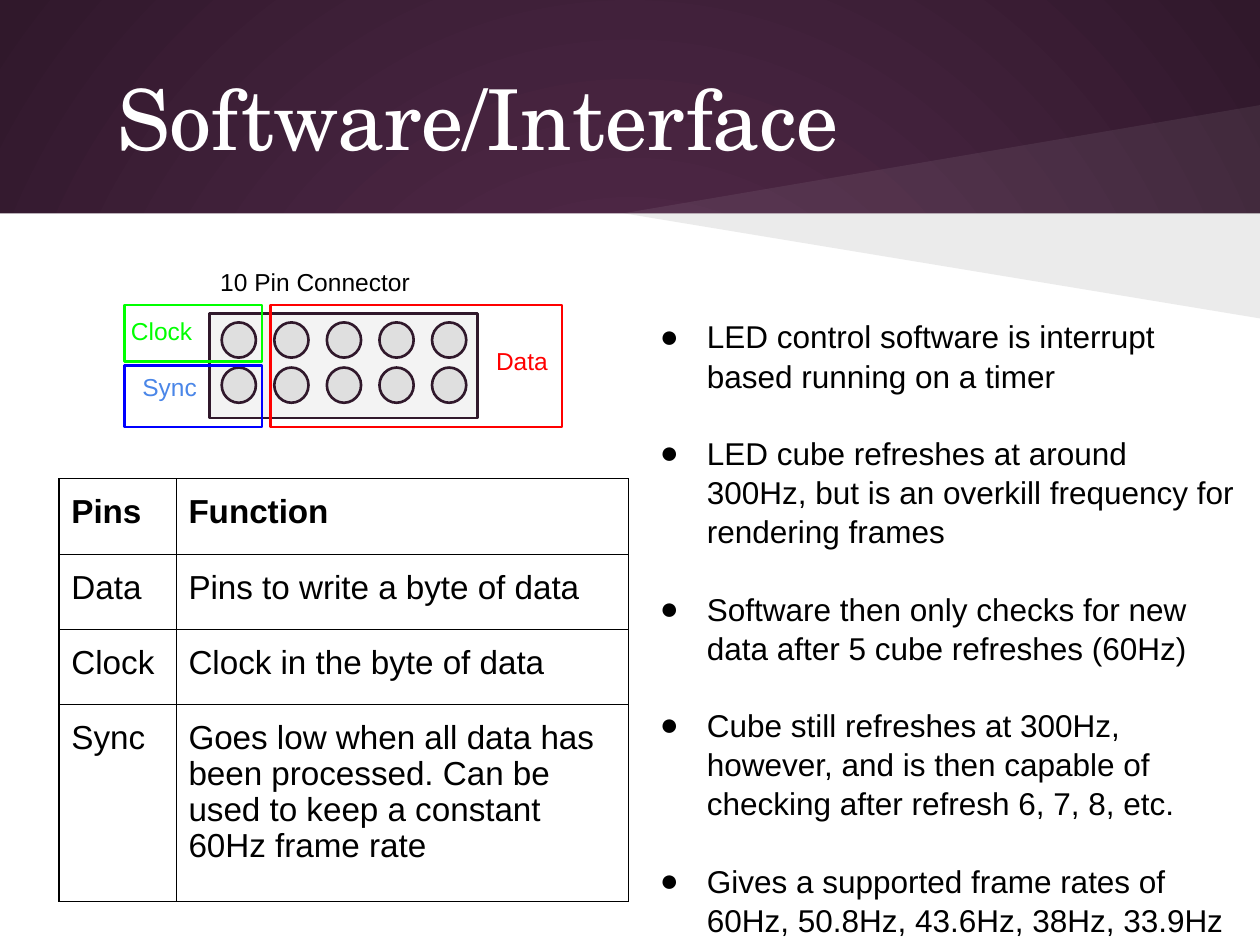
from dataclasses import dataclass

from lxml import etree
from pptx import Presentation
from pptx.dml.color import RGBColor
from pptx.enum.shapes import MSO_SHAPE
from pptx.enum.text import MSO_ANCHOR, MSO_AUTO_SIZE, PP_ALIGN
from pptx.oxml.ns import qn
from pptx.util import Cm, Pt

RECT, OVAL = MSO_SHAPE.RECTANGLE, MSO_SHAPE.OVAL
TOP, MIDDLE = MSO_ANCHOR.TOP, MSO_ANCHOR.MIDDLE
LEFT, FIXED = PP_ALIGN.LEFT, MSO_AUTO_SIZE.NONE


@dataclass(frozen=True)
class Theme:
    sans: str = "Arial"
    serif: str = "TeX Gyre Schola"
    title: int = 48
    cell: int = 19
    body: int = 18
    label: int = 14
    glow: str = "592D50"
    plum: str = "30182B"
    white: str = "FFFFFF"
    black: str = "000000"
    shell: str = "F3F3F3"
    pin: str = "DFDFDF"
    red: str = "FF0000"
    green: str = "00FF00"
    blue: str = "0000FF"
    sky: str = "4A86E8"


@dataclass(frozen=True)
class Box:
    """A place on the slide, in centimetres."""
    x: float
    y: float
    w: float
    h: float

    def place(self) -> tuple:
        return Cm(self.x), Cm(self.y), Cm(self.w), Cm(self.h)


@dataclass(frozen=True)
class Group:
    """A coloured frame around some pins, with its label."""
    name: str
    frame: Box
    line: str
    label: Box
    ink: str


THEME = Theme()
EDGE = 4.3
GROUPS = [
    Group("Data", Box(5.46, 6.15, 5.87, 2.46), THEME.red,
          Box(9.75, 6.73, 1.57, 1.37), THEME.red),
    Group("Clock", Box(2.51, 6.15, 2.77, 1.14), THEME.green,
          Box(2.39, 6.12, 2.08, 1.37), THEME.green),
    Group("Sync", Box(2.51, 7.37, 2.77, 1.24), THEME.blue,
          Box(2.62, 7.24, 2.08, 1.37), THEME.sky),
]
POINTS = [
    "LED control software is interrupt based running on a timer",
    "LED cube refreshes at around 300Hz, but is an overkill frequency for "
    "rendering frames",
    "Software then only checks for new data after 5 cube refreshes (60Hz)",
    "Cube still refreshes at 300Hz, however, and is then capable of "
    "checking after refresh 6, 7, 8, etc.",
    "Gives a supported frame rates of 60Hz, 50.8Hz, 43.6Hz, 38Hz, 33.9Hz",
]
ROWS = [
    ("Pins", "Function"),
    ("Data", "Pins to write a byte of data"),
    ("Clock", "Clock in the byte of data"),
    ("Sync", "Goes low when all data has been processed. Can be used to keep "
             "a constant 60Hz frame rate"),
]


def rgb(code: str) -> RGBColor:
    return RGBColor.from_string(code)


def write(frame, *lines: str, size: int, ink: str = THEME.black,
          font: str = THEME.sans, bold: bool = False, pitch: float = 1.0,
          gap: float = 0, left: float = 0, first: float = 0,
          bullet: str = "") -> None:
    """Fill a text frame, one paragraph a line; indents are in centimetres."""
    frame.word_wrap = True
    for i, line in enumerate(lines):
        para = frame.add_paragraph() if i else frame.paragraphs[0]
        para.alignment, para.line_spacing = LEFT, pitch
        para.space_before, para.space_after = Pt(gap if i else 0), Pt(0)
        props = para._p.get_or_add_pPr()
        props.set("marL", str(Cm(left)))
        props.set("indent", str(Cm(first)))
        if bullet:
            tint = etree.SubElement(props, qn("a:buClr"))
            etree.SubElement(tint, qn("a:srgbClr"), val=ink)
            etree.SubElement(props, qn("a:buChar"), char=bullet)
        else:
            etree.SubElement(props, qn("a:buNone"))
        run = para.add_run()
        run.text = line
        run.font.name, run.font.size = font, Pt(size)
        run.font.bold, run.font.color.rgb = bold, rgb(ink)


def pad(frame, anchor=TOP) -> None:
    frame.auto_size, frame.vertical_anchor = FIXED, anchor
    frame.margin_left = frame.margin_right = Cm(0.25)
    frame.margin_top = frame.margin_bottom = Cm(0.25)


def paint(shape, fill: str = "", line: str = "") -> None:
    shape.shadow.inherit = False
    if fill:
        shape.fill.solid()
        shape.fill.fore_color.rgb = rgb(fill)
    else:
        shape.fill.background()
    if line:
        shape.line.color.rgb, shape.line.width = rgb(line), Pt(1.5)
    else:
        shape.line.fill.background()


def draw(slide, kind, box: Box, fill: str = "", line: str = "") -> None:
    paint(slide.shapes.add_shape(kind, *box.place()), fill, line)


def label(slide, text: str, box: Box, ink: str = THEME.black) -> None:
    frame = slide.shapes.add_textbox(*box.place()).text_frame
    pad(frame)
    write(frame, text, size=THEME.label, ink=ink)


def wedge(slide, tip: float, fill: str, alpha: int) -> None:
    """Add a sheer triangle from the band's edge to a height on the right."""
    path = slide.shapes.build_freeform(Cm(25.4), Cm(EDGE))
    path.add_line_segments([(Cm(12.57), Cm(EDGE)), (Cm(25.4), Cm(tip))])
    shape = path.convert_to_shape()
    paint(shape, fill)
    tint = shape._element.spPr.find(".//" + qn("a:srgbClr"))
    etree.SubElement(tint, qn("a:alpha"), val=str(alpha * 1000))


def backdrop(slide) -> None:
    fill = slide.background.fill
    fill.gradient()
    for stop, code in zip(fill.gradient_stops, (THEME.glow, THEME.plum)):
        stop.color.rgb = rgb(code)
    lin = slide._element.find(".//" + qn("a:lin"))
    path = etree.Element(qn("a:path"), path="circle")
    etree.SubElement(path, qn("a:fillToRect"),
                     {side: "50000" for side in "ltrb"})
    lin.getparent().replace(lin, path)
    draw(slide, RECT, Box(0, EDGE, 25.4, 19.05 - EDGE), THEME.white)
    wedge(slide, 6.42, THEME.black, 8)
    wedge(slide, 2.12, THEME.white, 7)


def plug(slide) -> None:
    draw(slide, RECT, Box(4.22, 6.32, 5.41, 2.11), THEME.shell, THEME.plum)
    label(slide, "10 Pin Connector", Box(4.19, 5.13, 5.41, 1.37))
    for row in range(2):
        for col in range(5):
            spot = Box(4.47 + 1.06 * col, 6.5 + 0.91 * row, 0.69, 0.71)
            draw(slide, OVAL, spot, THEME.pin, THEME.plum)
    for group in GROUPS:
        draw(slide, RECT, group.frame, line=group.line)
        label(slide, group.name, group.label, group.ink)


def edge(cell) -> None:
    for side in ("lnL", "lnR", "lnT", "lnB"):
        line = etree.SubElement(cell._tc.get_or_add_tcPr(), qn("a:" + side),
                                w=str(Pt(0.75)))
        fill = etree.SubElement(line, qn("a:solidFill"))
        etree.SubElement(fill, qn("a:srgbClr"), val=THEME.black)


def grid(slide) -> None:
    box = Box(1.19, 9.65, 11.48, 8.52)
    table = slide.shapes.add_table(len(ROWS), 2, *box.place()).table
    table.horz_banding = False
    for col, width in zip(table.columns, (2.36, 9.12)):
        col.width = Cm(width)
    for row, height in zip(table.rows, (1.52, 1.52, 1.52, 3.96)):
        row.height = Cm(height)
    for i, texts in enumerate(ROWS):
        for j, text in enumerate(texts):
            cell = table.cell(i, j)
            cell.margin_left = cell.margin_right = Cm(0.25)
            cell.margin_top = cell.margin_bottom = Cm(0.33)
            edge(cell)
            cell.fill.background()
            write(cell.text_frame, text, size=THEME.cell, bold=i == 0,
                  pitch=0.97)


def lift(slide, shape, box: Box, anchor=TOP):
    """Move a placeholder to its place, in front of what is drawn so far."""
    shape.left, shape.top, shape.width, shape.height = box.place()
    slide.shapes._spTree.append(shape._element)
    pad(shape.text_frame, anchor)
    return shape.text_frame


def main() -> None:
    deck = Presentation()
    deck.slide_width, deck.slide_height = Cm(25.4), Cm(19.05)
    slide = deck.slides.add_slide(deck.slide_layouts[1])
    title, body = slide.placeholders
    backdrop(slide)
    write(lift(slide, title, Box(1.27, 0.76, 22.86, 3.18), MIDDLE),
          "Software/Interface", size=THEME.title, ink=THEME.white,
          font=THEME.serif, first=0.84)
    plug(slide)
    write(lift(slide, body, Box(12.73, 6.12, 12.4, 10.87)), *POINTS,
          size=THEME.body, pitch=1.04, gap=21.6, left=1.27, first=-0.95,
          bullet="●")
    grid(slide)
    deck.save("out.pptx")


if __name__ == "__main__":
    main()
